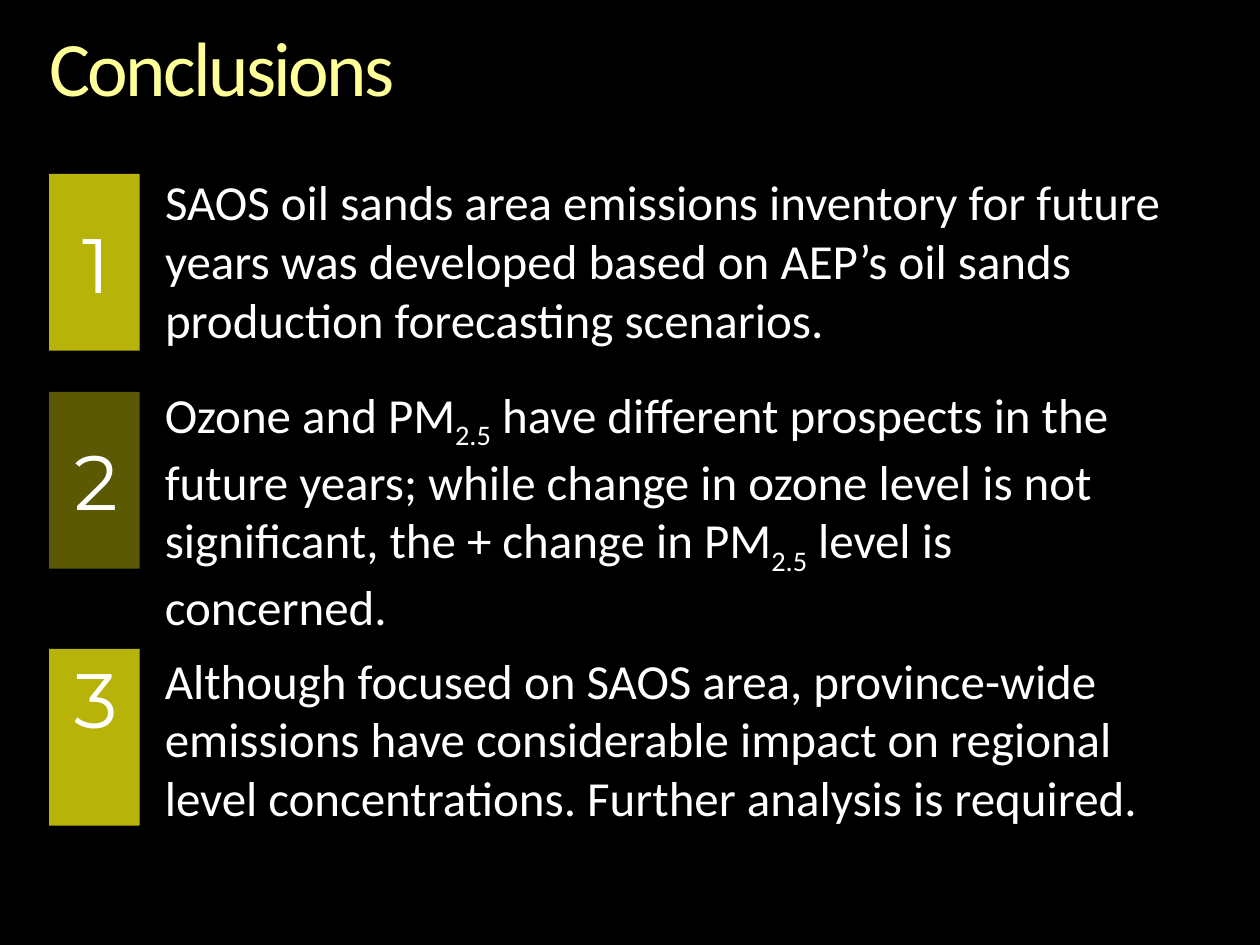
from lxml import etree
from pptx import Presentation
from pptx.dml.color import RGBColor
from pptx.enum.shapes import MSO_SHAPE
from pptx.enum.text import MSO_ANCHOR, MSO_AUTO_SIZE, PP_ALIGN
from pptx.oxml.ns import qn
from pptx.util import Pt

RECTANGLE = MSO_SHAPE.RECTANGLE
TOP = MSO_ANCHOR.TOP
NO_FIT = MSO_AUTO_SIZE.NONE
LEFT, CENTER = PP_ALIGN.LEFT, PP_ALIGN.CENTER
OLIVE, WHITE, YELLOW = "B7B309", "FFFFFF", "FFFF99"


def color(hex_string):
    return RGBColor.from_string(hex_string)


def write(box, place, runs, size, font, hex_string, align, insets):
    """Place a box and fill it with (text, baseline) runs."""
    box.left, box.top, box.width, box.height = map(Pt, place)
    frame = box.text_frame
    sides = ("margin_left", "margin_top", "margin_right", "margin_bottom")
    settings = {"word_wrap": True, "auto_size": NO_FIT, "vertical_anchor": TOP}
    settings.update(zip(sides, map(Pt, insets)))
    for name, value in settings.items():
        setattr(frame, name, value)
    paragraph = frame.paragraphs[0]
    paragraph.alignment = align
    paragraph.space_before = Pt(0)
    for text, baseline in runs:
        run = paragraph.add_run()
        run.text = text
        for name, value in {"size": Pt(size), "name": font}.items():
            setattr(run.font, name, value)
        run.font.color.rgb = color(hex_string)
        if baseline:
            run._r.get_or_add_rPr().set("baseline", str(baseline))
    return paragraph


presentation = Presentation()
presentation.slide_width, presentation.slide_height = Pt(720), Pt(540)
slide = presentation.slides.add_slide(presentation.slide_layouts[1])
slide.background.fill.solid()
slide.background.fill.fore_color.rgb = color("000000")
shapes = slide.shapes

# Title, with tightened letters
heading = write(shapes.title, (28.1, 17.3, 660.2, 48.2), [("Conclusions", 0)],
                44, "Calibri", YELLOW, LEFT, (0, 0, 0, 0))
heading.line_spacing = 0.9
heading.runs[0]._r.get_or_add_rPr().set("spc", "-150")

# Conclusions: bar top, bar opacity, number top, text place, text runs
SUBSCRIPT = ("2.5", -25000)
conclusions = [
    (99.4, 100, 120.2, (87.1, 94.3, 596.9, 100), [
        ("SAOS oil sands area emissions inventory for future years was "
         "developed based on AEP’s oil sands production forecasting scenarios.", 0)]),
    (223.9, 50, 244.1, (87.1, 216, 588.2, 143.3), [
        ("Ozone and PM", 0), SUBSCRIPT,
        (" have different prospects in the future years; while change in ozone "
         "level is not significant, the + change in PM", 0), SUBSCRIPT,
        (" level is concerned.", 0)]),
    (370.8, 100, 368.6, (87.1, 367.9, 596.9, 101.5), [
        ("Although focused on SAOS area, province-wide emissions have considerable "
         "impact on regional level concentrations. Further analysis is required.", 0)]),
]

for number, (bar_top, opacity, number_top, place, runs) in enumerate(conclusions, 1):
    # Coloured bar
    bar = shapes.add_shape(RECTANGLE, Pt(28.1), Pt(bar_top), Pt(51.8), Pt(101))
    bar.shadow.inherit = False
    bar.fill.solid()
    bar.fill.fore_color.rgb = color(OLIVE)
    bar.line.fill.background()
    if opacity < 100:
        bar_color = bar._element.spPr.find(".//" + qn("a:srgbClr"))
        etree.SubElement(bar_color, qn("a:alpha"), val=str(opacity * 1000))

    # Number on the bar
    digit = shapes.add_textbox(0, 0, 0, 0)
    write(digit, (29.5, number_top, 51.1, 60.5), [(str(number), 0)],
          44, "Montserrat", WHITE, CENTER, (7.2, 3.6, 7.2, 3.6))

    # Statement: the first one takes the body placeholder, without its bullet
    if number == 1:
        statement, insets = slide.placeholders[1], (7.2, 3.6, 0, 0)
        properties = statement.text_frame.paragraphs[0]._p.get_or_add_pPr()
        properties.set("marL", "0")
        properties.set("indent", "0")
        etree.SubElement(properties, qn("a:buNone"))
    else:
        statement, insets = shapes.add_textbox(0, 0, 0, 0), (7.2, 3.6, 7.2, 3.6)
    write(statement, place, runs, 28, "Calibri", WHITE, LEFT, insets)

presentation.save("out.pptx")
